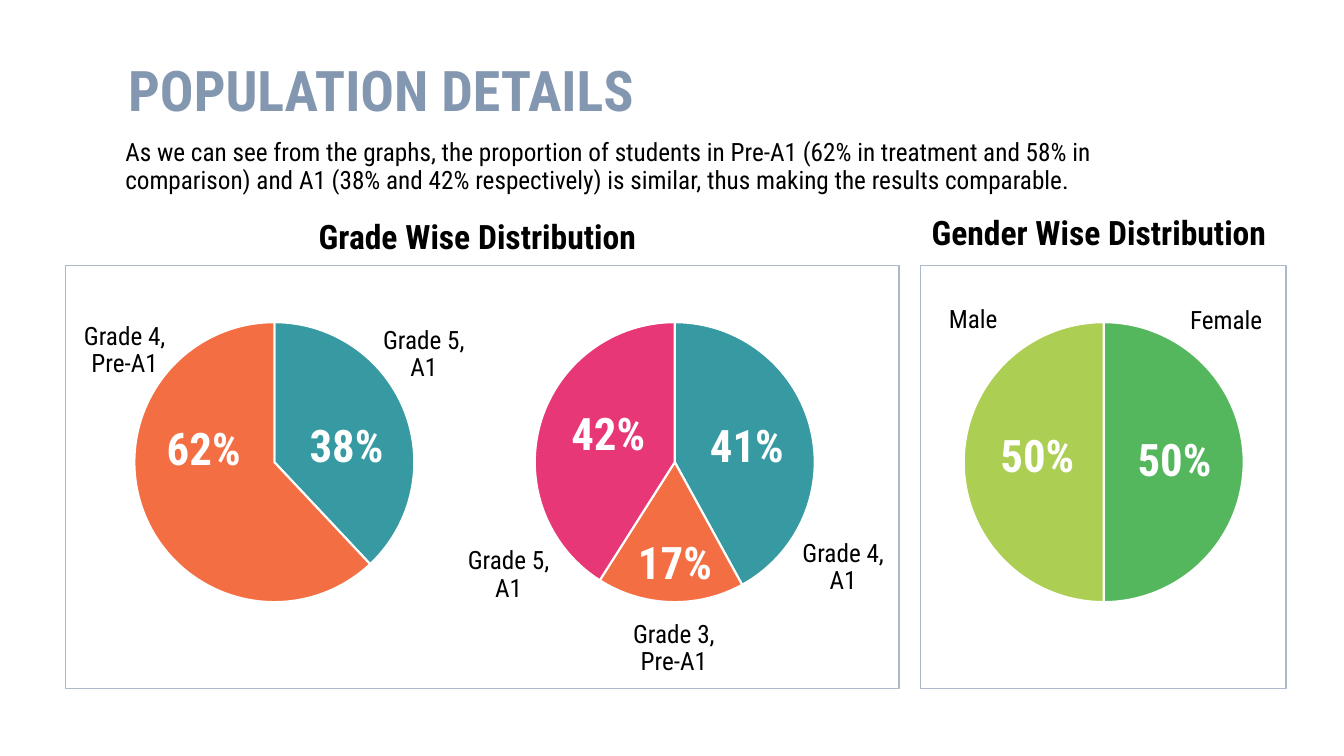
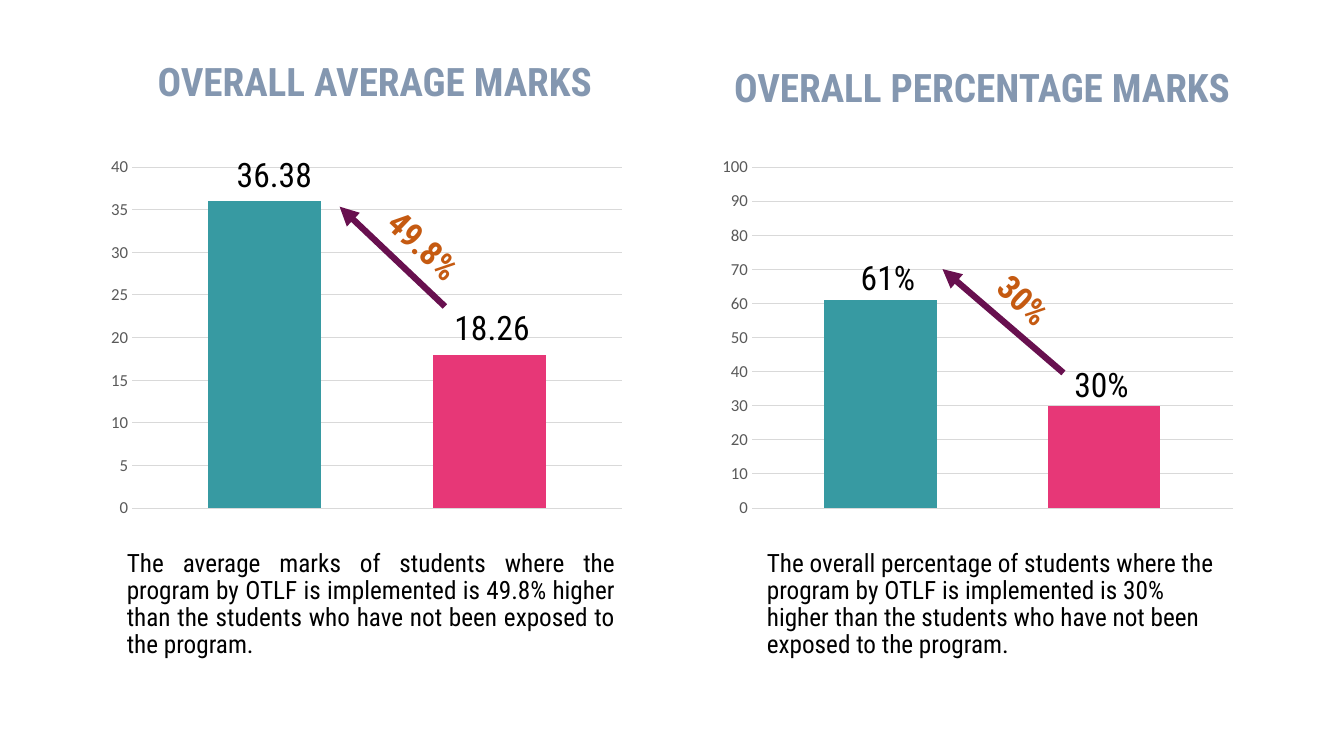
import pptx
import pptx.chart.data
import pptx.dml.color
import pptx.enum.chart
import pptx.enum.shapes
import pptx.enum.text
import pptx.oxml
import pptx.oxml.ns
import pptx.util
from lxml import etree

Pt = pptx.util.Pt
RGBColor = pptx.dml.color.RGBColor
Align = pptx.enum.text.PP_ALIGN
ChartType = pptx.enum.chart.XL_CHART_TYPE

TITLE_BLUE = RGBColor(0x84, 0x97, 0xB0)
FRAME_BLUE = RGBColor(0xAD, 0xB9, 0xCA)
BLACK = RGBColor(0, 0, 0)
WHITE = RGBColor(0xFF, 0xFF, 0xFF)
TEAL = RGBColor(0x37, 0x9A, 0xA2)
ORANGE = RGBColor(0xF3, 0x6F, 0x43)
PINK = RGBColor(0xE7, 0x37, 0x77)
GREEN = RGBColor(0x55, 0xB7, 0x5D)
LIME = RGBColor(0xAB, 0xCE, 0x53)
PLUM = RGBColor(0x68, 0x10, 0x4F)
RUST = RGBColor(0xC5, 0x5A, 0x11)
AXIS_GRAY = RGBColor(0x59, 0x59, 0x59)
GRID_GRAY = RGBColor(0xD9, 0xD9, 0xD9)
FONT = "Roboto Condensed"
CHART_FONT = "Calibri"

presentation = pptx.Presentation()
presentation.slide_width = Pt(960)
presentation.slide_height = Pt(540)
blank_layout = presentation.slide_layouts[6]


def add_text(slide, text, left, top, width, height, size=18, color=BLACK,
             bold=False, align=Align.LEFT, rotation=0):
    box = slide.shapes.add_textbox(Pt(left), Pt(top), Pt(width), Pt(height))
    box.rotation = rotation
    box.text_frame.word_wrap = True
    paragraph = box.text_frame.paragraphs[0]
    paragraph.alignment = align
    paragraph.line_spacing = 0.9
    run = paragraph.add_run()
    run.text = text
    run.font.name = FONT
    run.font.size = Pt(size)
    run.font.bold = bold
    run.font.color.rgb = color


def add_chart(slide, kind, categories, series, box, plot_box):
    """Add a chart whose plot area fills plot_box, given as fractions."""
    data = pptx.chart.data.CategoryChartData()
    data.categories = categories
    for number, values in enumerate(series, 1):
        data.add_series(f"Series {number}", values)
    chart = slide.shapes.add_chart(kind, *map(Pt, box), data).chart
    chart.has_legend = False
    chart.has_title = False
    chart.font.name = CHART_FONT
    chart.font.size = Pt(10)
    chart.font.color.rgb = BLACK
    chart.plots[0].vary_by_categories = kind == ChartType.PIE

    plot_area = chart.plots[0]._element.getparent()
    for old_layout in plot_area.findall(pptx.oxml.ns.qn("c:layout")):
        plot_area.remove(old_layout)
    layout = pptx.oxml.parse_xml(f"<c:layout {pptx.oxml.ns.nsdecls('c')}/>")
    plot_area.insert(0, layout)
    manual = etree.SubElement(layout, pptx.oxml.ns.qn("c:manualLayout"))
    settings = [("layoutTarget", "inner"), ("xMode", "edge"), ("yMode", "edge")]
    settings += zip("xywh", plot_box)
    for tag, value in settings:
        etree.SubElement(manual, pptx.oxml.ns.qn(f"c:{tag}")).set("val", str(value))
    return chart


# Slide 1: heading
slide = presentation.slides.add_slide(blank_layout)
add_text(slide, "POPULATION DETAILS", 84.5, 41.8, 740, 48,
         size=40, color=TITLE_BLUE, bold=True)
add_text(slide, "As we can see from the graphs, the proportion of students in "
         "Pre-A1 (62% in treatment and 58% in comparison) and A1 (38% and 42% "
         "respectively) is similar, thus making the results comparable.",
         82.4, 96.5, 769, 48)

# Pie charts
PIE_TOP, PIE_HEIGHT, DIAMETER = 220, 220.3, 200
for left, width, values, colors in [
    (33, 326, (38, 62), (TEAL, ORANGE)),
    (299, 366, (42, 17, 41), (TEAL, ORANGE, PINK)),
    (625.4, 326, (50, 50), (GREEN, LIME)),
]:
    plot_width, plot_height = DIAMETER / width, DIAMETER / PIE_HEIGHT
    chart = add_chart(
        slide, ChartType.PIE, [str(n + 1) for n in range(len(values))], [values],
        (left, PIE_TOP, width, PIE_HEIGHT),
        ((1 - plot_width) / 2, (1 - plot_height) / 2, plot_width, plot_height))
    for index, color in enumerate(colors):
        slice_format = chart.plots[0].series[0].points[index].format
        slice_format.fill.solid()
        slice_format.fill.fore_color.rgb = color
        slice_format.line.color.rgb = WHITE
        slice_format.line.width = Pt(1.5)

# Shares inside the slices
for share, left, top in [
    ("38%", 214, 299.5), ("62%", 112, 301), ("17%", 448.6, 382.6),
    ("42%", 401, 290.6), ("41%", 500, 299.2),
    ("50%", 707.5, 306), ("50%", 805.5, 308.9),
]:
    add_text(slide, share, left, top, 74, 31, size=32, color=WHITE, bold=True)

# Slice names
for name, left, top, width in [
    ("Grade 4, Pre-A1", 39.8, 227.5, 98.6), ("Grade 5, A1", 262.8, 230.4, 80),
    ("Grade 5, A1", 323.3, 388, 80), ("Grade 3, Pre-A1", 441.4, 440.6, 80),
    ("Grade 4, A1", 562.3, 382.6, 80), ("Male", 655.2, 215.3, 80),
    ("Female", 835.9, 216.4, 80),
]:
    add_text(slide, name, left, top, width, 48, align=Align.CENTER)

# Frames and their headings
for frame_left, frame_width, heading, left, top in [
    (46.8, 595.4, "Grade Wise Distribution", 220.6, 153.8),
    (657.7, 261, "Gender Wise Distribution", 658.4, 150.9),
]:
    frame = slide.shapes.add_shape(
        pptx.enum.shapes.MSO_SHAPE.RECTANGLE,
        Pt(frame_left), Pt(189.7), Pt(frame_width), Pt(302))
    frame.shadow.inherit = False
    frame.fill.background()
    frame.line.color.rgb = FRAME_BLUE
    frame.line.width = Pt(1)
    add_text(slide, heading, left, top, 276.5, 48, size=24, bold=True)

# Slide 2: one panel per measure
slide = presentation.slides.add_slide(blank_layout)
panels = [
    dict(title=("OVERALL AVERAGE MARKS", 105.5, 41, 350, 48),
         note=("The average marks of students where the program by OTLF is "
               "implemented is 49.8% higher than the students who have not been "
               "exposed to the program.", 83.5, 389.5, 363, 97),
         align=Align.JUSTIFY, left=72, plot_box=(0.059, 0.045, 0.922, 0.907),
         values=(36, 18), maximum=40, step=5, gap=135,
         labels=[("36.38", 162, 109.8), ("18.26", 317.5, 218.9)],
         arrow=(317.8, 218.9, 242.6, 147.6), change=("49.8%", 259.2, 177.1)),
    dict(title=("OVERALL PERCENTAGE MARKS", 517.3, 45.4, 430, 48),
         note=("The overall percentage of students where the program by OTLF is "
               "implemented is 30% higher than the students who have not been "
               "exposed to the program.", 540.7, 389.5, 335.5, 97),
         align=Align.LEFT, left=508.3, plot_box=(0.076, 0.045, 0.905, 0.907),
         values=(61, 30), maximum=100, step=10, gap=129,
         labels=[("61%", 607.7, 183.2), ("30%", 760.3, 260)],
         arrow=(759.6, 266.4, 673.2, 192.2), change=("30%", 694.8, 222.5)),
]
for panel in panels:
    add_text(slide, *panel["title"], size=28, color=TITLE_BLUE, bold=True)
    add_text(slide, *panel["note"], align=panel["align"])

    # Column chart
    chart = add_chart(slide, ChartType.COLUMN_CLUSTERED, ["1"],
                      [(value,) for value in panel["values"]],
                      (panel["left"], 107.3, 379.4, 268.6), panel["plot_box"])
    chart.plots[0].gap_width = panel["gap"]
    chart.plots[0].overlap = -99
    for series, color in zip(chart.plots[0].series, (TEAL, PINK)):
        series.format.fill.solid()
        series.format.fill.fore_color.rgb = color
    chart.category_axis.visible = False
    axis = chart.value_axis
    axis.minimum_scale = 0
    axis.maximum_scale = panel["maximum"]
    axis.major_unit = panel["step"]
    axis.major_tick_mark = pptx.enum.chart.XL_TICK_MARK.NONE
    axis.format.line.fill.background()
    axis.major_gridlines.format.line.color.rgb = GRID_GRAY
    axis.major_gridlines.format.line.width = Pt(0.75)
    axis.tick_labels.font.name = CHART_FONT
    axis.tick_labels.font.size = Pt(12)
    axis.tick_labels.font.color.rgb = AXIS_GRAY

    # Values above the columns
    for value, left, top in panel["labels"]:
        add_text(slide, value, left, top, 74, 31, size=24)

    # Arrow and change
    arrow = slide.shapes.add_connector(
        pptx.enum.shapes.MSO_CONNECTOR.STRAIGHT, *map(Pt, panel["arrow"]))
    arrow.line.color.rgb = PLUM
    arrow.line.width = Pt(4.5)
    etree.SubElement(arrow.line._get_or_add_ln(),
                     pptx.oxml.ns.qn("a:tailEnd")).set("type", "triangle")
    etree.SubElement(arrow._element.spPr, pptx.oxml.ns.qn("a:effectLst"))
    add_text(slide, *panel["change"], 121.7, 31, size=24, color=RUST,
             bold=True, rotation=43.5)

presentation.save("out.pptx")
